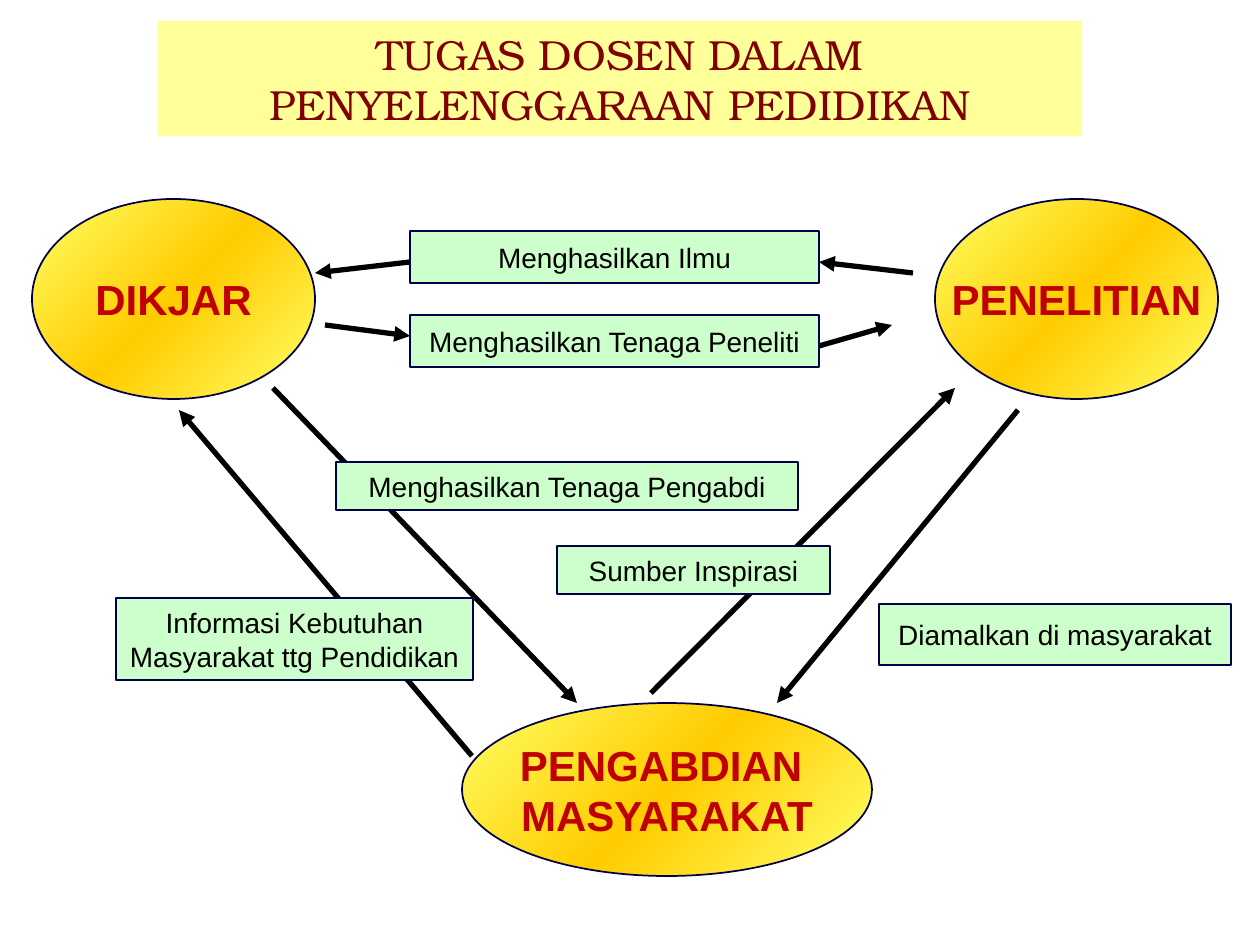
"""Build a slide on the three duties of a lecturer and how they feed one another."""
import copy

import lxml.etree
import pptx
import pptx.dml.color
import pptx.enum.shapes
import pptx.enum.text
import pptx.oxml.ns
import pptx.util

COLORS = {
    "title": "800000", "title_fill": "FFFF99",
    "duty": "C00000", "duty_edge": "FFFF66", "duty_middle": "FFCC00",
    "note": "000000", "note_fill": "CCFFCC",
    "outline": "000046", "arrow": "000000",
}
DUTIES = [
    ("DIKJAR", 32, 199, 283, 200),
    ("PENELITIAN", 935, 199, 283, 200),
    ("PENGABDIAN \vMASYARAKAT", 462, 703, 410, 173),
]
ARROWS = [
    (819, 346, 892, 325), (410, 262, 315, 273),
    (651, 693, 955, 388), (1018, 410, 777, 703),
    (472, 756, 179, 410), (273, 388, 577, 703),
    (325, 325, 410, 336), (913, 273, 819, 262),
]
NOTES = [
    ("Menghasilkan Ilmu", 410, 231, 409, 52),
    ("Menghasilkan Tenaga Peneliti", 410, 315, 409, 52),
    ("Diamalkan di masyarakat", 879, 604, 352, 61),
    ("Menghasilkan Tenaga Pengabdi", 336, 462, 462, 48),
    ("Informasi Kebutuhan Masyarakat ttg Pendidikan", 116, 598, 357, 82),
    ("Sumber Inspirasi", 557, 546, 273, 48),
]


def px(length):
    return pptx.util.Emu(round(length * 914400 / 126))


def color(name):
    return pptx.dml.color.RGBColor.from_string(COLORS[name])


class DutySlide:
    """Hold the fonts and the current page, and add each kind of element."""

    def __init__(self, deck):
        self.font = "Arial"
        self.title_font = "TeX Gyre Bonum"
        self.page = deck.slides.add_slide(deck.slide_layouts[5])

    def label(self, shape, text, size, name, font, bold=False, wrap=True):
        frame = shape.text_frame
        frame.text = text
        frame.word_wrap = wrap
        frame.auto_size = pptx.enum.text.MSO_AUTO_SIZE.NONE
        frame.vertical_anchor = pptx.enum.text.MSO_ANCHOR.MIDDLE
        for para in frame.paragraphs:
            para.alignment = pptx.enum.text.PP_ALIGN.CENTER
            for span in para.runs:
                span.font.size = pptx.util.Pt(size)
                span.font.name = font
                span.font.bold = bold
                span.font.color.rgb = color(name)

    def title(self, text, left, top, width, height):
        box = self.page.shapes.title
        box.left, box.top, box.width, box.height = map(px, (left, top, width, height))
        box.fill.solid()
        box.fill.fore_color.rgb = color("title_fill")
        self.label(box, text, 24, "title", self.title_font)

    def outlined(self, kind, *bounds):
        shape = self.page.shapes.add_shape(kind, *map(px, bounds))
        shape.shadow.inherit = False
        shape.line.color.rgb = color("outline")
        shape.line.width = pptx.util.Pt(1)
        return shape

    def duty(self, text, *bounds):
        oval = self.outlined(pptx.enum.shapes.MSO_SHAPE.OVAL, *bounds)
        oval.fill.gradient()
        oval.fill.gradient_angle = 315
        stops = oval._element.spPr.find(".//" + pptx.oxml.ns.qn("a:gsLst"))
        stops.insert(1, copy.deepcopy(stops[0]))
        names = ("duty_edge", "duty_middle", "duty_edge")
        for index, (stop, name) in enumerate(zip(oval.fill.gradient_stops, names)):
            stop.position = index / 2
            stop.color.rgb = color(name)
        self.label(oval, text, 24, "duty", self.font, bold=True, wrap=False)

    def note(self, text, *bounds):
        box = self.outlined(pptx.enum.shapes.MSO_SHAPE.RECTANGLE, *bounds)
        box.fill.solid()
        box.fill.fore_color.rgb = color("note_fill")
        self.label(box, text, 16, "note", self.font)

    def arrow(self, *ends):
        straight = pptx.enum.shapes.MSO_CONNECTOR.STRAIGHT
        arrow = self.page.shapes.add_connector(straight, *map(px, ends))
        arrow.line.color.rgb = color("arrow")
        arrow.line.width = pptx.util.Pt(3)
        qn = pptx.oxml.ns.qn
        outline = arrow._element.spPr.find(qn("a:ln"))
        lxml.etree.SubElement(outline, qn("a:tailEnd"), type="triangle")
        lxml.etree.SubElement(arrow._element.spPr, qn("a:effectLst"))


def main():
    deck = pptx.Presentation()
    deck.slide_width, deck.slide_height = px(1260), px(945)
    slide = DutySlide(deck)
    slide.title("TUGAS DOSEN DALAM PENYELENGGARAAN PEDIDIKAN", 158, 21, 924, 115)
    for duty in DUTIES:
        slide.duty(*duty)
    for arrow in ARROWS:
        slide.arrow(*arrow)
    for note in NOTES:
        slide.note(*note)
    deck.save("out.pptx")


if __name__ == "__main__":
    main()
